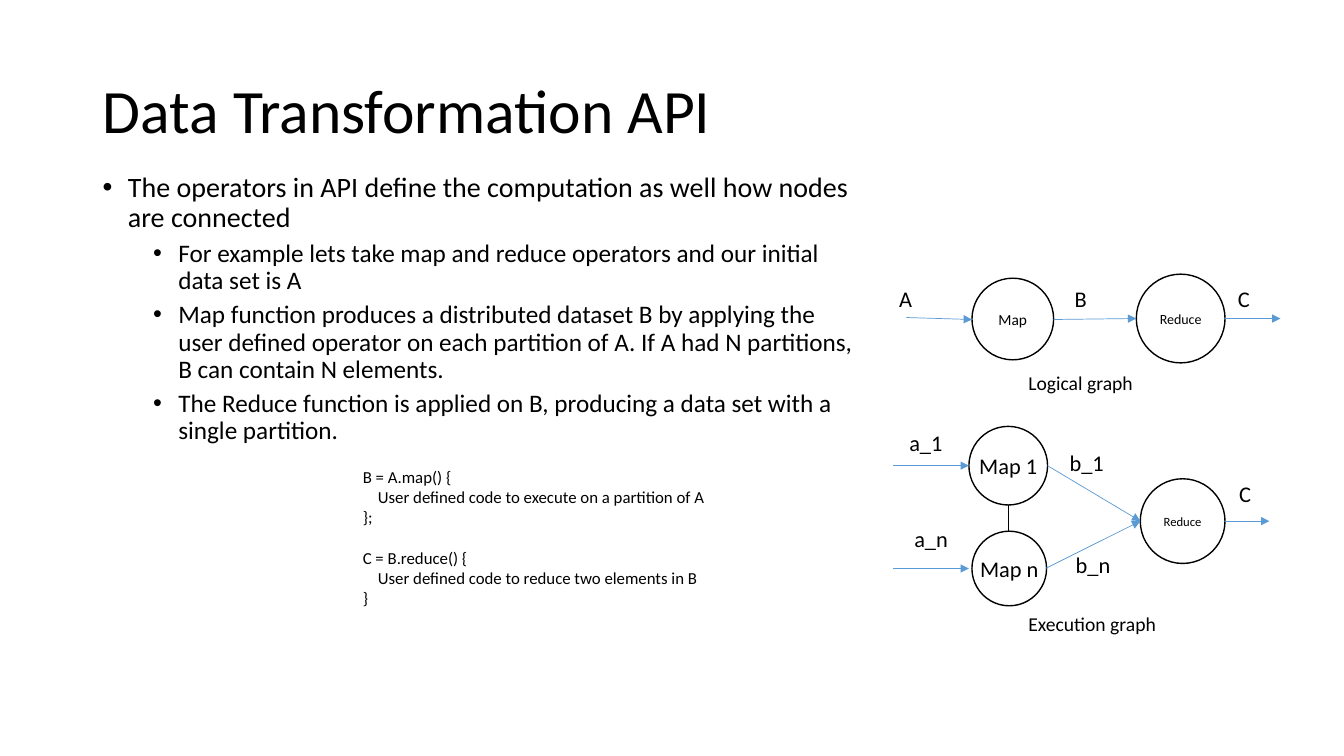
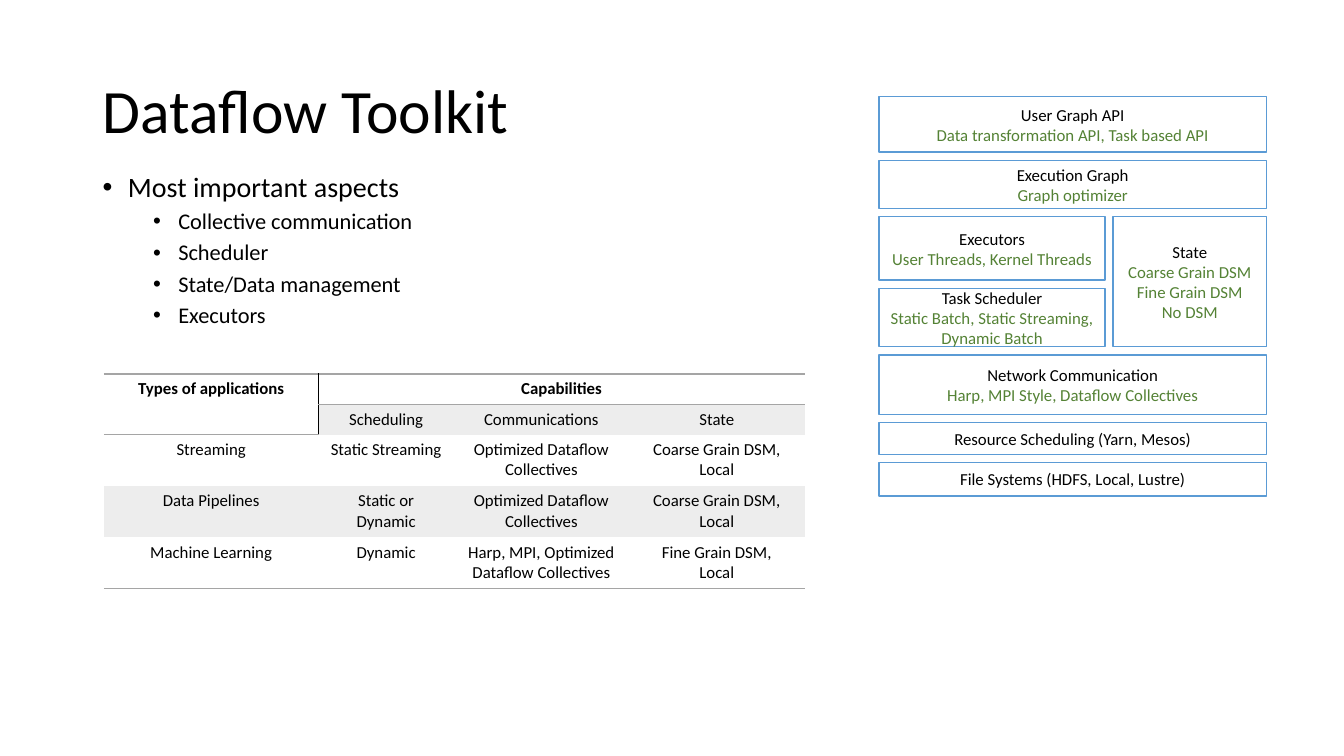
from dataclasses import dataclass
from itertools import product

from lxml import etree
from pptx import Presentation
from pptx.dml.color import RGBColor
from pptx.enum.shapes import MSO_CONNECTOR, MSO_SHAPE
from pptx.enum.text import MSO_ANCHOR, MSO_AUTO_SIZE, PP_ALIGN
from pptx.oxml.ns import qn
from pptx.util import Emu, Pt

LEFT, CENTER = PP_ALIGN.LEFT, PP_ALIGN.CENTER
MIDDLE = MSO_ANCHOR.MIDDLE
NO_AUTOFIT = MSO_AUTO_SIZE.NONE
OVAL, RECTANGLE = MSO_SHAPE.OVAL, MSO_SHAPE.RECTANGLE
STRAIGHT = MSO_CONNECTOR.STRAIGHT
PX = 9144
PLAIN_TABLE = "{2D5ABB26-0587-4C30-8999-92F81FD0307C}"


@dataclass(frozen=True)
class Theme:
    font: str = "Calibri"
    black: str = "000000"
    white: str = "FFFFFF"
    blue: str = "5B9BD5"
    green: str = "548235"
    grey: str = "A5A5A5"
    band: str = "EDEDED"
    title: int = 44
    bullet: int = 20
    detail: int = 18
    label: int = 16
    caption: int = 14
    small: int = 12


THEME = Theme()


def px(*lengths):
    return [Emu(length * PX) for length in lengths]


def write(frame, text, size, color=THEME.black, bold=False, align=LEFT, before=0, spacing=None, level=None):
    para = frame.paragraphs[0]
    if para.runs:
        para = frame.add_paragraph()
        para.space_before = Pt(before)
    if level is not None:
        para.level = level
        properties = para._p.get_or_add_pPr()
        properties.set("marL", str((25 + 50 * level) * PX))
        properties.set("indent", str(-25 * PX))
        etree.SubElement(properties, qn("a:buFont")).set("typeface", "Arial")
        etree.SubElement(properties, qn("a:buChar")).set("char", "•")
    para.alignment = align
    if spacing:
        para.line_spacing = spacing
    span = para.add_run()
    span.text = text
    span.font.name = THEME.font
    span.font.size = Pt(size)
    span.font.bold = bold
    span.font.color.rgb = RGBColor.from_string(color)


deck = Presentation()
deck.slide_width, deck.slide_height = px(1333, 750)

topics = [
    ("Data Transformation API", 765, THEME.detail, [
        "The operators in API define the computation as well how nodes are connected",
        "For example lets take map and reduce operators and our initial data set is A",
        "Map function produces a distributed dataset B by applying the user defined operator on each "
        "partition of A. If A had N partitions, B can contain N elements.",
        "The Reduce function is applied on B, producing a data set with a single partition.",
    ]),
    ("Dataflow Toolkit", 588, THEME.label, [
        "Most important aspects",
        "Collective communication",
        "Scheduler",
        "State/Data management",
        "Executors",
    ]),
]
pages = []
for heading, width, detail_size, points in topics:
    page = deck.slides.add_slide(deck.slide_layouts[5])
    pages.append(page)
    title = page.shapes.title
    title.left, title.top, title.width, title.height = px(92, 40, 1150, 145)
    title.text_frame.auto_size = NO_AUTOFIT
    title.text_frame.vertical_anchor = MIDDLE
    write(title.text_frame, heading, THEME.title, spacing=0.9)
    body = page.shapes.add_textbox(*px(92, 167, width, 476))
    body.text_frame.word_wrap = True
    for index, point in enumerate(points):
        level = min(index, 1)
        write(body.text_frame, point, detail_size if level else THEME.bullet,
              before=5, spacing=0.9, level=level)

graph_page, toolkit_page = pages

code = graph_page.shapes.add_textbox(*px(350, 458, 364, 151))
code.text_frame.word_wrap = False
for text, before in [
    ("B = A.map() {", 0),
    ("    User defined code to execute on a partition of A", 0),
    ("};", 0),
    ("C = B.reduce() {", 14.6),
    ("    User defined code to reduce two elements in B", 0),
    ("}", 0),
]:
    write(code.text_frame, text, THEME.small, before=before)

nodes = [
    ("Map", 964, 276, 81, 11),
    ("Reduce", 1127, 272, 88, 10),
    ("Map 1", 961, 423, 78, THEME.label),
    ("Map n", 964, 527, 74, THEME.label),
    ("Reduce", 1131, 475, 84, 9),
]
for name, left, top, diameter, size in nodes:
    node = graph_page.shapes.add_shape(OVAL, *px(left, top, diameter, diameter))
    node.shadow.inherit = False
    node.fill.solid()
    node.fill.fore_color.rgb = RGBColor.from_string(THEME.white)
    node.line.color.rgb = RGBColor.from_string(THEME.black)
    node.line.width = Pt(1)
    frame = node.text_frame
    frame.word_wrap = False
    frame.vertical_anchor = MIDDLE
    frame.margin_left = frame.margin_right = 0
    write(frame, name, size, align=CENTER)

edges = [
    (899, 315, 964, 317, True),
    (1045, 317, 1127, 316, True),
    (1215, 316, 1270, 316, True),
    (886, 462, 961, 462, True),
    (886, 564, 961, 564, True),
    (1039, 462, 1131, 517, True),
    (1037, 564, 1131, 517, True),
    (1215, 517, 1259, 517, True),
    (1000, 501, 1000, 527, False),
]
for *ends, arrow in edges:
    edge = graph_page.shapes.add_connector(STRAIGHT, *px(*ends))
    edge.line.color.rgb = RGBColor.from_string(THEME.blue if arrow else THEME.black)
    edge.line.width = Pt(0.5)
    properties = edge._element.spPr
    if arrow:
        etree.SubElement(properties.find(qn("a:ln")), qn("a:tailEnd")).set("type", "triangle")
    etree.SubElement(properties, qn("a:effectLst"))

labels = [
    ("A", 882, 278, 33, THEME.label),
    ("B", 1056, 278, 32, THEME.label),
    ("C", 1218, 278, 32, THEME.label),
    ("Logical graph", 1010, 363, 125, THEME.caption),
    ("a_1", 892, 421, 54, THEME.label),
    ("b_1", 1051, 441, 55, THEME.label),
    ("a_n", 897, 516, 54, THEME.label),
    ("b_n", 1057, 542, 55, THEME.label),
    ("C", 1219, 471, 32, THEME.label),
    ("Execution graph", 1010, 602, 148, THEME.caption),
]
for text, left, top, width, size in labels:
    label = graph_page.shapes.add_textbox(*px(left, top, width, 37 if size == THEME.label else 34))
    label.text_frame.word_wrap = False
    write(label.text_frame, text, size)

STACK_LEFT, STACK_WIDTH, STACK_GAP, HALF_WIDTH = 872, 384, 8, 224
layers = [
    (55, STACK_WIDTH, ["User Graph API", "Data transformation API, Task based API"]),
    (48, STACK_WIDTH, ["Execution Graph", "Graph optimizer"]),
    (63, HALF_WIDTH, ["Executors", "User Threads, Kernel Threads"]),
    (58, HALF_WIDTH, ["Task Scheduler", "Static Batch, Static Streaming, Dynamic Batch"]),
    (59, STACK_WIDTH, ["Network Communication", "Harp, MPI Style, Dataflow Collectives"]),
    (32, STACK_WIDTH, ["Resource Scheduling (Yarn, Mesos)"]),
    (33, STACK_WIDTH, ["File Systems (HDFS, Local, Lustre)"]),
]
blocks = []
top = 96
for height, width, lines in layers:
    blocks.append((STACK_LEFT, top, width, height, lines))
    top += height + STACK_GAP
state_top = blocks[2][1]
state_height = blocks[3][1] + blocks[3][3] - state_top
blocks.append((STACK_LEFT + HALF_WIDTH + STACK_GAP, state_top,
               STACK_WIDTH - HALF_WIDTH - STACK_GAP, state_height,
               ["State", "Coarse Grain DSM", "Fine Grain DSM", "No DSM"]))
for *place, lines in blocks:
    box = toolkit_page.shapes.add_shape(RECTANGLE, *px(*place))
    box.shadow.inherit = False
    box.fill.solid()
    box.fill.fore_color.rgb = RGBColor.from_string(THEME.white)
    box.line.color.rgb = RGBColor.from_string(THEME.blue)
    box.line.width = Pt(1)
    box.text_frame.word_wrap = True
    box.text_frame.vertical_anchor = MIDDLE
    for index, text in enumerate(lines):
        write(box.text_frame, text, THEME.small, color=THEME.green if index else THEME.black, align=CENTER)

rows = [
    ["Types of applications", "Capabilities", "", ""],
    ["", "Scheduling", "Communications", "State"],
    ["Streaming", "Static Streaming", "Optimized Dataflow Collectives", "Coarse Grain DSM, Local"],
    ["Data Pipelines", "Static or Dynamic", "Optimized Dataflow Collectives", "Coarse Grain DSM,\nLocal"],
    ["Machine Learning", "Dynamic", "Harp, MPI, Optimized Dataflow Collectives", "Fine Grain DSM,\nLocal"],
]
column_widths = [213, 134, 174, 174]
row_heights = [30, 30, 51, 51, 51]
table = toolkit_page.shapes.add_table(
    len(rows), len(column_widths), *px(103, 371, sum(column_widths), sum(row_heights))).table
table.first_row = table.horz_banding = False
table._tbl.tblPr.find(qn("a:tableStyleId")).text = PLAIN_TABLE
for column, width in zip(table.columns, px(*column_widths)):
    column.width = width
for row, height in zip(table.rows, px(*row_heights)):
    row.height = height
table.cell(0, 0).merge(table.cell(1, 0))
table.cell(0, 1).merge(table.cell(0, 3))
last_row = len(rows) - 1
for row, column in product(range(len(rows)), range(len(column_widths))):
    cell = table.cell(row, column)
    type_heading = column == 0 and row < 2
    borders = [
        ("a:lnR", THEME.black, type_heading),
        ("a:lnT", THEME.grey, row == 0),
        ("a:lnB", THEME.grey, row in (0, last_row) or type_heading),
    ]
    properties = cell._tc.get_or_add_tcPr()
    for side, color, shown in borders:
        if shown:
            border = etree.SubElement(properties, qn(side), w=str(Pt(1)))
            fill = etree.SubElement(border, qn("a:solidFill"))
            etree.SubElement(fill, qn("a:srgbClr")).set("val", color)
    banded = row % 2 == 1 and not type_heading
    cell.fill.solid()
    cell.fill.fore_color.rgb = RGBColor.from_string(THEME.band if banded else THEME.white)
    for text in rows[row][column].splitlines():
        write(cell.text_frame, text, THEME.small, bold=row == 0, align=CENTER)

deck.save("out.pptx")
